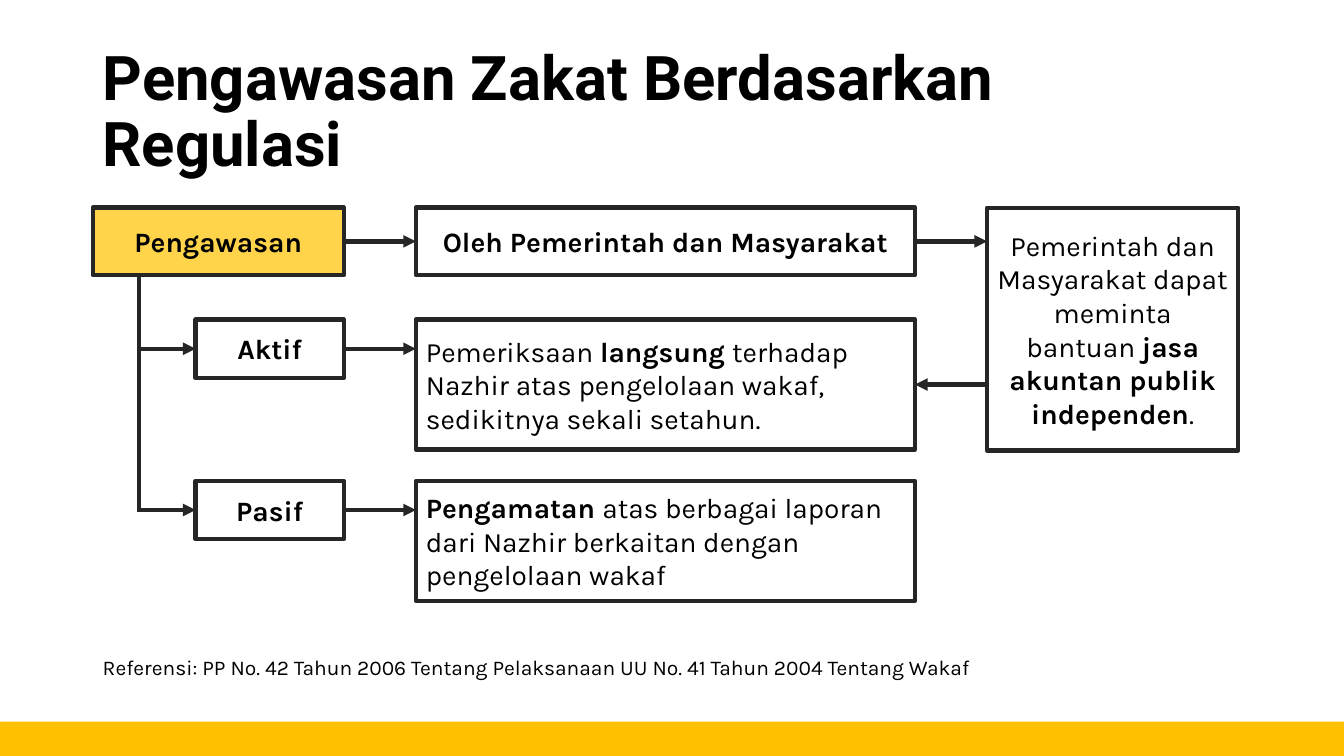
from dataclasses import dataclass

from lxml import etree
from pptx import Presentation
from pptx import util as u
from pptx.dml.color import RGBColor
from pptx.enum import shapes, text
from pptx.oxml import ns


@dataclass(frozen=True)
class Theme:
    """Colours, fonts and type sizes of the slide."""
    ink: str = "000000"
    outline: str = "262626"
    paper: str = "FFFFFF"
    highlight: str = "FFD44B"
    band: str = "FFC000"
    title_font: str = "Roboto"
    body_font: str = "Karla"
    title_size: int = 44
    body_size: int = 20
    reference_size: int = 15
    stroke: int = 3


THEME = Theme()
LEFT, CENTER = text.PP_ALIGN.LEFT, text.PP_ALIGN.CENTER
MIDDLE, TOP = text.MSO_ANCHOR.MIDDLE, text.MSO_ANCHOR.TOP


def apply(target, values):
    """Set each attribute of the target from a dict."""
    for name, value in values.items():
        setattr(target, name, value)


def inches(*lengths):
    """Turn plain numbers into lengths."""
    return [u.Inches(length) for length in lengths]


def write(shape, runs, size=THEME.body_size, font=THEME.body_font,
          align=LEFT, anchor=MIDDLE, spacing=1.0):
    """Fill a shape with one paragraph of (words, bold) runs."""
    apply(shape.text_frame, {"word_wrap": True, "vertical_anchor": anchor})
    paragraph = shape.text_frame.paragraphs[0]
    apply(paragraph, {"alignment": align, "line_spacing": spacing})
    for words, bold in runs:
        run = paragraph.add_run()
        run.text = words
        apply(run.font, {"size": u.Pt(size), "name": font, "bold": bold})
        run.font.color.rgb = RGBColor.from_string(THEME.ink)


def add_box(slide, box, runs, align=CENTER, fill=THEME.paper):
    """Draw an outlined box with text."""
    shape = slide.shapes.add_shape(shapes.MSO_SHAPE.ROUNDED_RECTANGLE, *inches(*box))
    shape.adjustments[0] = 0
    shape.shadow.inherit = False
    shape.fill.solid()
    shape.fill.fore_color.rgb = RGBColor.from_string(fill)
    shape.line.color.rgb = RGBColor.from_string(THEME.outline)
    shape.line.width = u.Pt(THEME.stroke)
    write(shape, runs, align=align)


def add_line(slide, start, end, arrow=True):
    """Draw a straight line, with an arrowhead at its end if wanted."""
    line = slide.shapes.add_connector(
        shapes.MSO_CONNECTOR.STRAIGHT, *inches(*start, *end))
    line.line.color.rgb = RGBColor.from_string(THEME.outline)
    line.line.width = u.Pt(THEME.stroke)
    if arrow:
        outline = line.line._get_or_add_ln()
        etree.SubElement(outline, ns.qn("a:tailEnd"), type="triangle")
    etree.SubElement(line._element.spPr, ns.qn("a:effectLst"))


def add_text(slide, box, words, bold=False, **style):
    """Place a text box with one run."""
    write(slide.shapes.add_textbox(*inches(*box)), [(words, bold)], **style)


def add_band(slide, box):
    """Draw the coloured band at the foot of the slide."""
    band = slide.shapes.add_shape(shapes.MSO_SHAPE.RECTANGLE, *inches(*box))
    band.shadow.inherit = False
    band.fill.solid()
    band.fill.fore_color.rgb = RGBColor.from_string(THEME.band)
    band.line.fill.background()


def add_flow(slide, box):
    """Draw the supervision chart inside the given box."""
    left, top, width, height = box
    side, gap, head, label = 2.49, 0.715, 0.67, 0.58
    first_right = left + side
    middle_left = first_right + gap
    last_left = left + width - side
    middle_width = last_left - gap - middle_left
    middle_right = middle_left + middle_width
    head_y = top + head / 2
    trunk_x, label_left = left + 0.46, left + 1.02
    branch_tops = [top + 1.11, top + 2.71]
    last_height = 2.41

    add_box(slide, (left, top, side, head), [("Pengawasan", True)], fill=THEME.highlight)
    add_box(slide, (middle_left, top, middle_width, head),
            [("Oleh Pemerintah dan Masyarakat", True)])
    add_box(slide, (last_left, top, side, last_height),
            [("Pemerintah dan Masyarakat dapat meminta bantuan ", False),
             ("jasa akuntan publik independen", True), (".", False)])
    add_line(slide, (first_right, head_y), (middle_left, head_y))
    add_line(slide, (middle_right, head_y), (last_left, head_y))

    branches = [
        ("Aktif", 1.29, [
            ("Pemeriksaan ", False), ("langsung ", True),
            ("terhadap Nazhir atas pengelolaan wakaf, sedikitnya sekali setahun.", False)]),
        ("Pasif", height - 2.71, [
            ("Pengamatan ", True),
            ("atas berbagai laporan dari Nazhir berkaitan dengan pengelolaan wakaf", False)]),
    ]
    for branch_top, (name, detail_height, runs) in zip(branch_tops, branches):
        branch_y = branch_top + label / 2
        add_box(slide, (label_left, branch_top, first_right - label_left, label),
                [(name, True)])
        add_box(slide, (middle_left, branch_top, middle_width, detail_height), runs, LEFT)
        add_line(slide, (trunk_x, branch_y), (label_left, branch_y))
        add_line(slide, (first_right, branch_y), (middle_left, branch_y))

    add_line(slide, (trunk_x, top + head), (trunk_x, branch_y + 0.02), arrow=False)
    return_y = branch_tops[0] + branches[0][1] / 2
    add_line(slide, (last_left, return_y), (middle_right, return_y))


def main():
    """Build and save the slide."""
    presentation = Presentation()
    apply(presentation, {"slide_width": u.Inches(13.33), "slide_height": u.Inches(7.5)})
    slide = presentation.slides.add_slide(presentation.slide_layouts[6])
    add_band(slide, (0, 7.16, 13.33, 0.34))
    add_text(slide, (0.92, 0.4, 11.5, 1.45), "Pengawasan Zakat Berdasarkan Regulasi",
             bold=True, size=THEME.title_size, font=THEME.title_font, spacing=0.9)
    add_flow(slide, (0.92, 2.06, 11.36, 3.9))
    add_text(slide, (0.92, 6.44, 9.98, 0.35),
             "Referensi: PP No. 42 Tahun 2006 Tentang Pelaksanaan UU No. 41 Tahun 2004"
             " Tentang Wakaf", size=THEME.reference_size, anchor=TOP)
    presentation.save("out.pptx")


if __name__ == "__main__":
    main()
